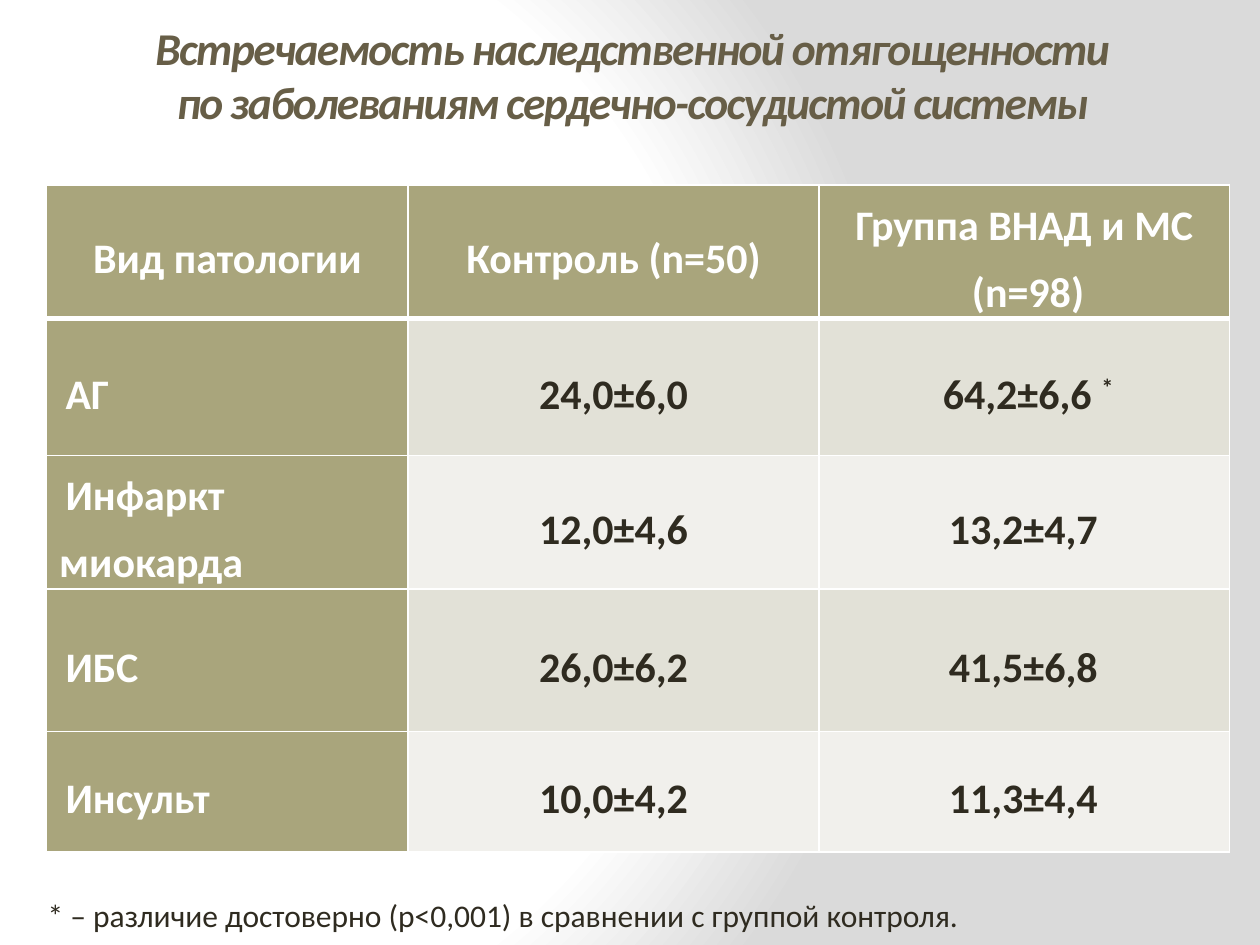
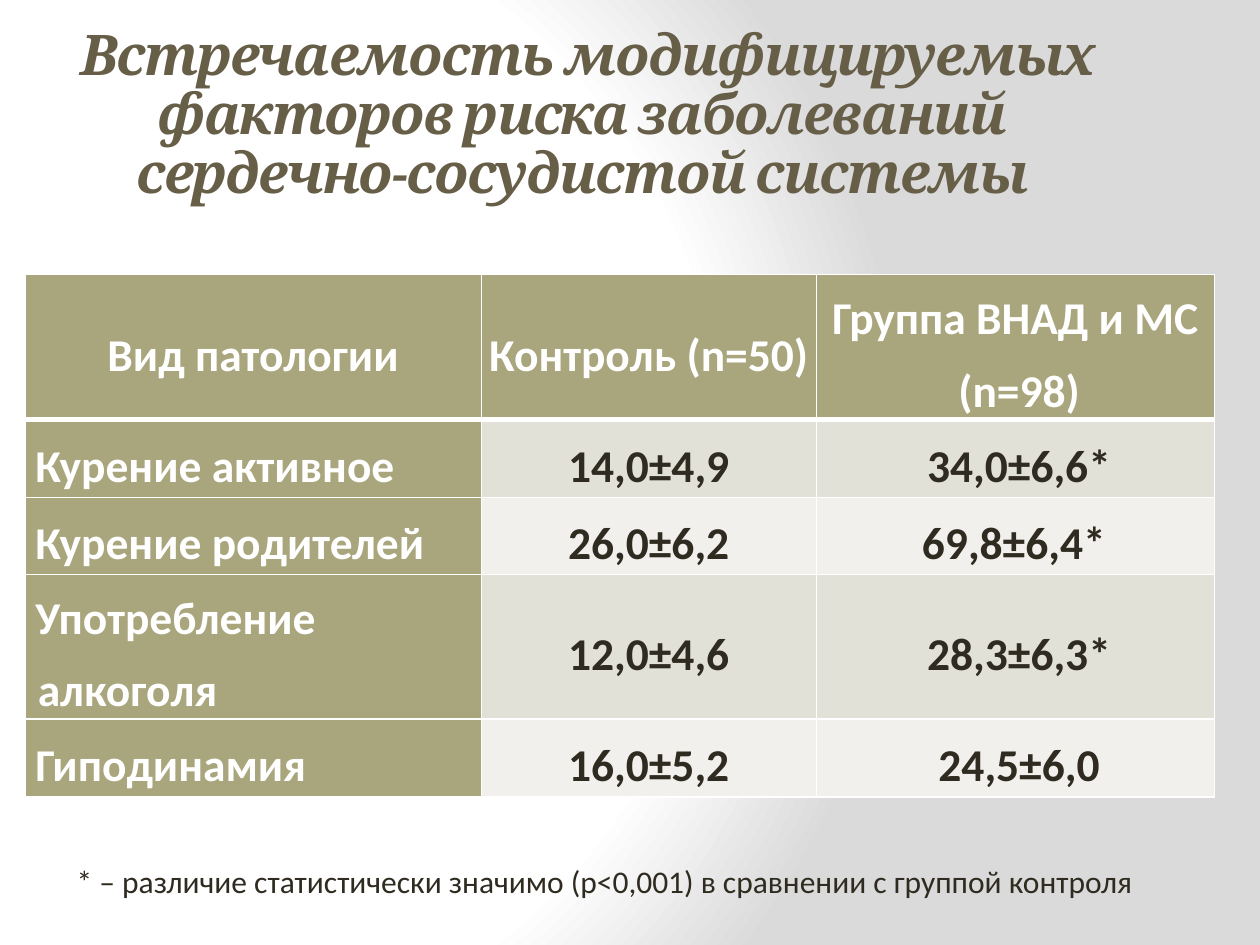
from pptx import Presentation
from pptx.dml.color import RGBColor
from pptx.enum.text import MSO_ANCHOR, MSO_AUTO_SIZE, PP_ALIGN
from pptx.oxml import parse_xml
from pptx.oxml.ns import nsdecls
from pptx.util import Inches, Pt

LEFT, CENTER = PP_ALIGN.LEFT, PP_ALIGN.CENTER
MIDDLE = MSO_ANCHOR.MIDDLE
NO_FIT, GROW = MSO_AUTO_SIZE.NONE, MSO_AUTO_SIZE.SHAPE_TO_FIT_TEXT

# Content: a caret in a cell makes the rest of its text superscript
HEADINGS = ("Вид патологии", "Контроль (n=50)", "Группа ВНАД и МС (n=98)")
SLIDES = [
    {
        "title": "Встречаемость наследственной отягощенности \v"
                 "по заболеваниям сердечно-сосудистой системы ",
        "title_box": (0.52, 0.13, 9.07, 0.92),
        "title_format": {"size": 26, "font": "Calibri"},
        "rows": [
            ("АГ", "24,0±6,0", "64,2±6,6 ^*"),
            ("Инфаркт миокарда", "12,0±4,6", "13,2±4,7 "),
            ("ИБС", "26,0±6,2", "41,5±6,8 "),
            ("Инсульт", "10,0±4,2", "11,3±4,4 "),
        ],
        "table_corner": (0.37, 1.47),
        "columns": (2.87, 3.26, 3.26),
        "heights": (0.96, 1.09, 0.96, 1.13, 0.96),
        "cell_size": 24,
        "label_indent": 0.05,
        "footnote": "* – различие достоверно (р<0,001) в сравнении с группой контроля.",
        "footnote_box": (0.28, 7.06, 9.57, 0.4),
    },
    {
        "title": "Встречаемость модифицируемых факторов риска заболеваний \v"
                 "сердечно-сосудистой системы ",
        "title_box": (0.5, 0.3, 8.33, 1.25),
        "title_format": {"size": 32, "font": "Cambria", "spacing": 0.88},
        "rows": [
            ("Курение активное", "14,0±4,9", "34,0±6,6*"),
            ("Курение родителей", "26,0±6,2", "69,8±6,4* "),
            ("Употребление алкоголя", "12,0±4,6", "28,3±6,3*"),
            ("Гиподинамия", "16,0±5,2", "24,5±6,0"),
        ],
        "table_corner": (0.2, 2.18),
        "columns": (3.62, 2.66, 3.16),
        "heights": (0.62, 0.62, 0.61, 0.61, 0.62),
        "cell_size": 26,
        "label_indent": -0.02,
        "footnote": "* – различие статистически значимо (р<0,001) в сравнении с группой контроля",
        "footnote_box": (0.51, 6.79, 9.21, 0.4),
    },
]

# Shared look
COLORS = {"title": "675E47", "text": "2F2B20", "white": "FFFFFF", "olive": "A9A57C",
          "band_dark": "E2E1D7", "band_light": "F1F0EC", "edge": "DADADA"}
COLUMN_MARGINS = (0.1, 0.03, 0.06)
HANGING = -0.28


def write_text(frame, text, *, size, font="Calibri", color="text", bold=False, italic=False,
               align=LEFT, spacing=None, tracking=0, margin=0, indent=0):
    paragraph = frame.paragraphs[0]
    paragraph.alignment = align
    if spacing:
        paragraph.line_spacing = spacing
    properties = paragraph._p.get_or_add_pPr()
    properties.set("marL", str(Inches(margin)))
    properties.set("indent", str(Inches(indent)))
    body, _, raised = text.partition("^")
    for part, baseline in ((body, 0), (raised, 30000)):
        for number, line in enumerate(part.split("\v") if part else ()):
            if number:
                paragraph.add_line_break()
            run = paragraph.add_run()
            run.text = line
            run.font.size, run.font.name = Pt(size), font
            run.font.bold, run.font.italic = bold, italic
            run.font.color.rgb = RGBColor.from_string(COLORS[color])
            run_properties = run._r.get_or_add_rPr()
            if tracking:
                run_properties.set("spc", str(tracking * 100))
            if baseline:
                run_properties.set("baseline", str(baseline))


def set_background(master):
    stops = "".join(
        f'<a:gs pos="{position}"><a:srgbClr val="{COLORS[color]}"/></a:gs>'
        for position, color in ((0, "white"), (75000, "white"), (100000, "edge")))
    master.background.fill.solid()
    old_fill = master.background.fill._xPr.find(
        "{http://schemas.openxmlformats.org/drawingml/2006/main}solidFill")
    old_fill.getparent().replace(old_fill, parse_xml(
        f'<a:gradFill {nsdecls("a")} rotWithShape="1"><a:gsLst>{stops}</a:gsLst>'
        '<a:path path="circle"><a:fillToRect l="20000" t="50000" r="100000" b="50000"/>'
        '</a:path></a:gradFill>'))


def set_borders(cell, row):
    widths = {"L": 1, "R": 1, "T": 3 if row == 1 else 1, "B": 3 if row == 0 else 1}
    for side, width in widths.items():
        cell._tc.get_or_add_tcPr().append(parse_xml(
            f'<a:ln{side} {nsdecls("a")} w="{Pt(width)}"><a:solidFill>'
            f'<a:srgbClr val="{COLORS["white"]}"/></a:solidFill></a:ln{side}>'))


def add_title(slide, content):
    title = slide.shapes.title
    title.left, title.top, title.width, title.height = map(Inches, content["title_box"])
    title.text_frame.auto_size = NO_FIT
    title.text_frame.word_wrap = True
    title.text_frame.vertical_anchor = MIDDLE
    write_text(title.text_frame, content["title"], color="title", bold=True, italic=True,
               align=CENTER, tracking=-1, **content["title_format"])


def add_pathology_table(slide, content):
    rows = [HEADINGS, *content["rows"]]
    columns, heights = content["columns"], content["heights"]
    left, top = content["table_corner"]
    table = slide.shapes.add_table(
        len(rows), len(columns), Inches(left), Inches(top),
        Inches(sum(columns)), Inches(sum(heights))).table
    for column, width in zip(table.columns, columns):
        column.width = Inches(width)
    for r, values in enumerate(rows):
        table.rows[r].height = Inches(heights[r])
        for c, value in enumerate(values):
            cell = table.cell(r, c)
            is_label = c == 0 and r > 0
            is_olive = r == 0 or c == 0
            cell.margin_left = cell.margin_right = cell.margin_top = cell.margin_bottom = 0
            cell.vertical_anchor = MIDDLE
            set_borders(cell, r)
            cell.fill.solid()
            band = "olive" if is_olive else "band_dark" if r % 2 else "band_light"
            cell.fill.fore_color.rgb = RGBColor.from_string(COLORS[band])
            if is_label:
                indent = content["label_indent"]
            else:
                indent = 0 if r > 0 and c == 2 else HANGING
            write_text(cell.text_frame, value, size=content["cell_size"], bold=True,
                       color="white" if is_olive else "text",
                       align=LEFT if is_label else CENTER, spacing=1.3,
                       margin=COLUMN_MARGINS[c], indent=indent)


def add_footnote(slide, content):
    footnote = slide.shapes.add_textbox(*map(Inches, content["footnote_box"])).text_frame
    footnote.word_wrap = True
    footnote.auto_size = GROW
    write_text(footnote, content["footnote"], size=18)


def main():
    deck = Presentation()
    deck.slide_width, deck.slide_height = Inches(10), Inches(7.5)
    set_background(deck.slide_master)
    title_only = deck.slide_layouts[5]
    for content in SLIDES:
        slide = deck.slides.add_slide(title_only)
        add_title(slide, content)
        add_pathology_table(slide, content)
        add_footnote(slide, content)
    deck.save("out.pptx")


if __name__ == "__main__":
    main()
